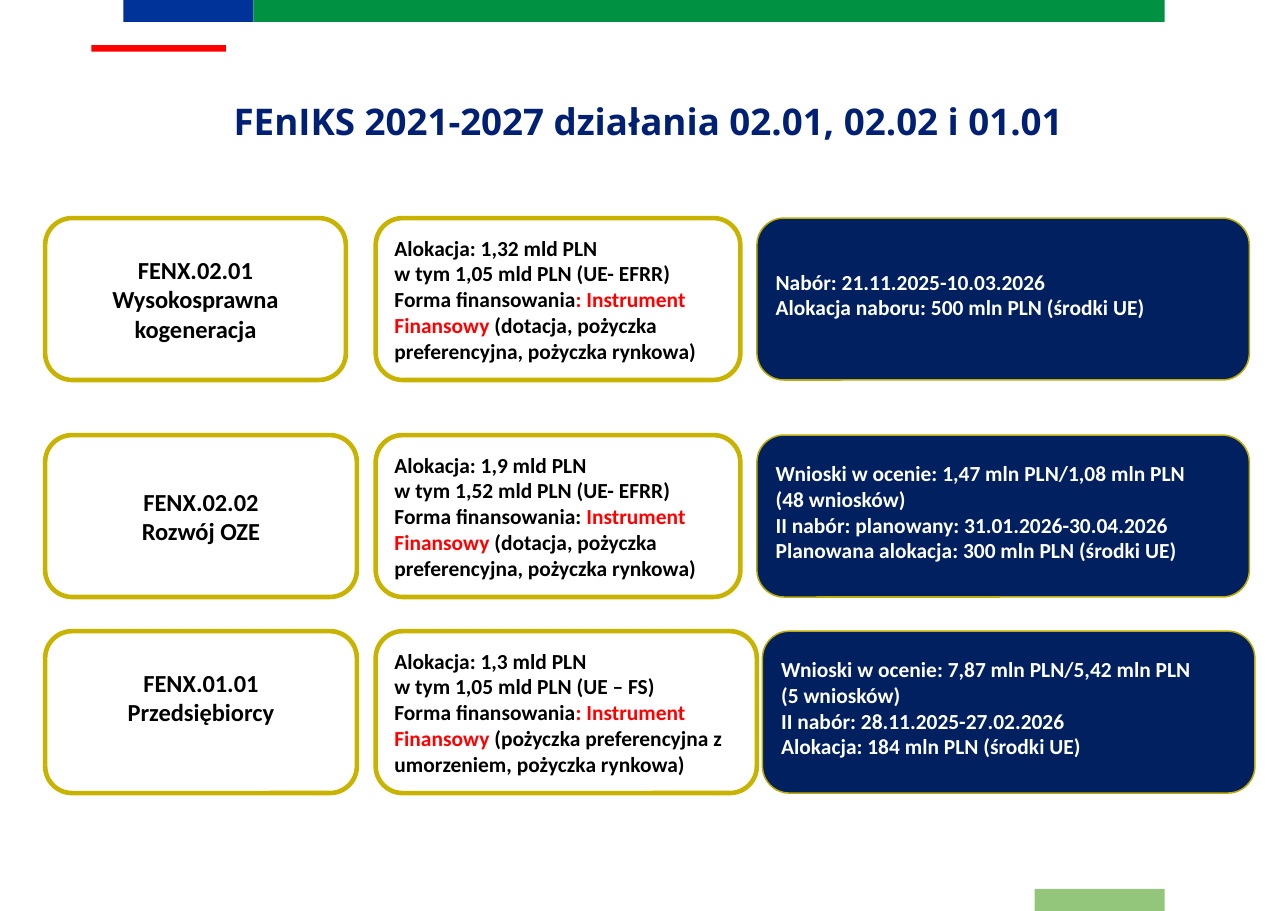
from dataclasses import dataclass

import pptx
import pptx.dml.color
import pptx.enum.shapes
import pptx.enum.text
import pptx.util

Inches = pptx.util.Inches
Shape = pptx.enum.shapes.MSO_SHAPE
Align = pptx.enum.text.PP_ALIGN
Anchor = pptx.enum.text.MSO_ANCHOR


@dataclass(frozen=True)
class Theme:
    body_font: str = "Calibri"
    title_font: str = "Open Sans"
    title_size: int = 24
    measure_size: int = 16
    detail_size: int = 14
    title: str = "002073"
    blue: str = "003399"
    green: str = "009242"
    light_green: str = "93C67B"
    red: str = "FF0000"
    black: str = "000000"
    white: str = "FFFFFF"
    navy: str = "002060"
    gold: str = "C8B300"
    dark_gold: str = "BDAA08"


THEME = Theme()


@dataclass(frozen=True)
class Run:
    text: str
    color: str


Paragraph = str | list[Run]


@dataclass(frozen=True)
class Bar:
    left: float
    top: float
    width: float
    height: float
    color: str


@dataclass(frozen=True)
class CardStyle:
    fill: str
    line: str
    line_width: int
    text_color: str
    size: int
    align: Align


@dataclass(frozen=True)
class Card:
    left: float
    width: float
    style: CardStyle
    paragraphs: list[Paragraph]
    bottom_inset: float = 0.05


@dataclass(frozen=True)
class Row:
    top: float
    cards: list[Card]


MEASURE = CardStyle(THEME.white, THEME.gold, 3, THEME.black, THEME.measure_size, Align.CENTER)
FUNDING = CardStyle(THEME.white, THEME.gold, 3, THEME.black, THEME.detail_size, Align.LEFT)
CALL = CardStyle(THEME.navy, THEME.dark_gold, 1, THEME.white, THEME.detail_size, Align.LEFT)

CARD_HEIGHT = 1.47
MEASURE_LEFT = 0.41
FUNDING_LEFT = 3.41
CALL_LEFT = 6.87
CALL_WIDTH = 4.47
CALL_INSET = 0.13

BARS = [
    Bar(1.12, 0, 1.18, 0.2, THEME.blue),
    Bar(2.3, 0, 8.27, 0.2, THEME.green),
    Bar(9.39, 8.07, 1.18, 0.2, THEME.light_green),
    Bar(0.83, 0.41, 1.22, 0.06, THEME.red),
]


def financing(label: str, instrument: str, forms: str) -> list[Run]:
    return [Run(label, THEME.black), Run(instrument, THEME.red), Run(forms, THEME.black)]


ROWS = [
    Row(1.98, [
        Card(MEASURE_LEFT, 2.73, MEASURE, ["FENX.02.01", "Wysokosprawna kogeneracja"]),
        Card(FUNDING_LEFT, 3.31, FUNDING, [
            "Alokacja: 1,32 mld PLN",
            "w tym 1,05 mld PLN (UE- EFRR)",
            financing("Forma finansowania", ": Instrument Finansowy",
                      " (dotacja, pożyczka preferencyjna, pożyczka rynkowa)"),
        ]),
        Card(CALL_LEFT, CALL_WIDTH, CALL, [
            "Nabór: 21.11.2025-10.03.2026",
            "Alokacja naboru: 500 mln PLN (środki UE)",
        ], CALL_INSET),
    ]),
    Row(3.95, [
        Card(MEASURE_LEFT, 2.83, MEASURE, ["FENX.02.02", "Rozwój OZE"]),
        Card(FUNDING_LEFT, 3.31, FUNDING, [
            "Alokacja: 1,9 mld PLN",
            "w tym 1,52 mld PLN (UE- EFRR)",
            financing("Forma finansowania: ", "Instrument Finansowy",
                      " (dotacja, pożyczka preferencyjna, pożyczka rynkowa)"),
        ]),
        Card(CALL_LEFT, CALL_WIDTH, CALL, [
            "Wnioski w ocenie: 1,47 mln PLN/1,08 mln PLN",
            "(48 wniosków)",
            "II nabór: planowany: 31.01.2026-30.04.2026",
            "Planowana alokacja: 300 mln PLN (środki UE)",
        ], CALL_INSET),
    ]),
    Row(5.73, [
        Card(MEASURE_LEFT, 2.83, MEASURE, ["FENX.01.01", "Przedsiębiorcy"], 0.32),
        Card(FUNDING_LEFT, 3.46, FUNDING, [
            "Alokacja: 1,3 mld PLN",
            "w tym 1,05 mld PLN (UE – FS)",
            financing("Forma finansowania", ": Instrument Finansowy",
                      " (pożyczka preferencyjna z umorzeniem, pożyczka rynkowa)"),
        ]),
        Card(CALL_LEFT + 0.05, CALL_WIDTH, CALL, [
            "Wnioski w ocenie: 7,87 mln PLN/5,42 mln PLN",
            "(5 wniosków)",
            "II nabór: 28.11.2025-27.02.2026",
            "Alokacja: 184 mln PLN (środki UE)",
        ], CALL_INSET),
    ]),
]


def rgb(color: str) -> pptx.dml.color.RGBColor:
    return pptx.dml.color.RGBColor.from_string(color)


def write_text(tf, paragraphs: list[Paragraph], *, size: int, color: str, align: Align,
               font: str = THEME.body_font, line_spacing: int | None = None) -> None:
    tf.word_wrap = True
    tf.vertical_anchor = Anchor.MIDDLE
    for i, content in enumerate(paragraphs):
        p = tf.add_paragraph() if i else tf.paragraphs[0]
        p.alignment = align
        if line_spacing:
            p.line_spacing = pptx.util.Pt(line_spacing)
        for part in [Run(content, color)] if isinstance(content, str) else content:
            r = p.add_run()
            r.text = part.text
            r.font.name = font
            r.font.size = pptx.util.Pt(size)
            r.font.bold = True
            r.font.color.rgb = rgb(part.color)


def add_box(s, kind: Shape, left: float, top: float, width: float, height: float, fill: str):
    sp = s.shapes.add_shape(kind, Inches(left), Inches(top), Inches(width), Inches(height))
    sp.shadow.inherit = False
    sp.fill.solid()
    sp.fill.fore_color.rgb = rgb(fill)
    sp.line.fill.background()
    return sp


def draw_bar(s, bar: Bar) -> None:
    add_box(s, Shape.RECTANGLE, bar.left, bar.top, bar.width, bar.height, bar.color)


def draw_card(s, card: Card, top: float) -> None:
    style = card.style
    sp = add_box(s, Shape.ROUNDED_RECTANGLE, card.left, top, card.width, CARD_HEIGHT, style.fill)
    sp.line.color.rgb = rgb(style.line)
    sp.line.width = pptx.util.Pt(style.line_width)
    sp.text_frame.margin_bottom = Inches(card.bottom_inset)
    write_text(sp.text_frame, card.paragraphs, size=style.size, color=style.text_color,
               align=style.align)


def draw_title(s, text: str) -> None:
    sp = s.shapes.title
    sp.left, sp.top, sp.width, sp.height = map(Inches, (0.26, 0.75, 11.25, 0.59))
    tf = sp.text_frame
    tf.margin_left = tf.margin_top = tf.margin_right = tf.margin_bottom = 0
    tf.auto_size = pptx.enum.text.MSO_AUTO_SIZE.NONE
    write_text(tf, [text], size=THEME.title_size, color=THEME.title, align=Align.CENTER,
               font=THEME.title_font, line_spacing=36)


def main() -> None:
    prs = pptx.Presentation()
    prs.slide_width, prs.slide_height = Inches(11.69), Inches(8.27)
    s = prs.slides.add_slide(prs.slide_layouts.get_by_name("Title Only"))
    for bar in BARS:
        draw_bar(s, bar)
    draw_title(s, "FEnIKS 2021-2027 działania 02.01, 02.02 i 01.01")
    for row in ROWS:
        for card in row.cards:
            draw_card(s, card, row.top)
    prs.save("out.pptx")


if __name__ == "__main__":
    main()
